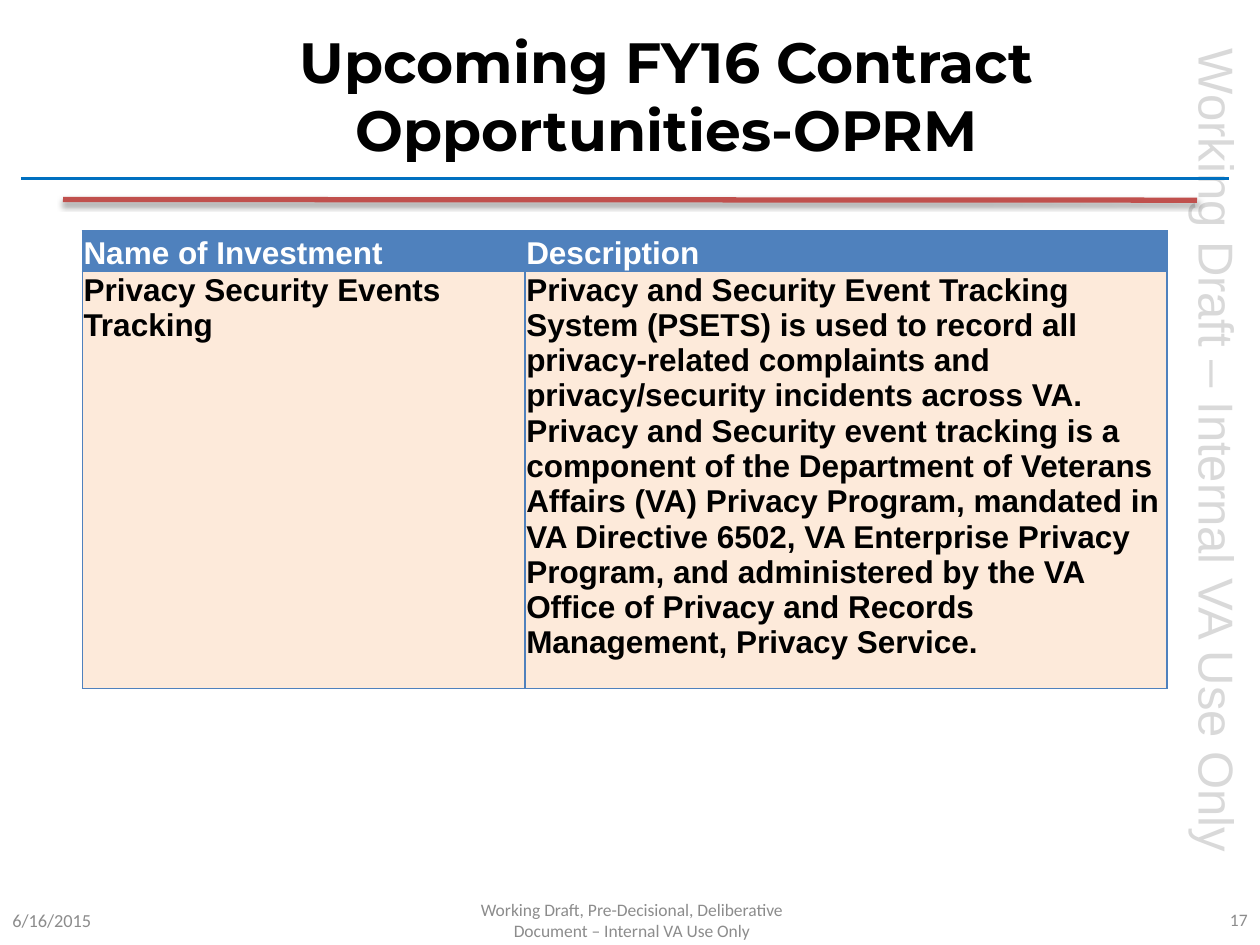
from lxml.etree import SubElement
from pptx import Presentation
from pptx.dml.color import RGBColor
from pptx.enum.shapes import MSO_CONNECTOR
from pptx.enum.text import MSO_ANCHOR as Anchor, PP_ALIGN as Align
from pptx.oxml.ns import qn
from pptx.util import Pt

BLACK = RGBColor(0x00, 0x00, 0x00)
WHITE = RGBColor(0xFF, 0xFF, 0xFF)
LIGHT_GRAY = RGBColor(0xD9, 0xD9, 0xD9)
FOOTER_GRAY = RGBColor(0x8C, 0x8C, 0x8C)
RULE_BLUE = RGBColor(0x00, 0x70, 0xC0)
RULE_RED = RGBColor(0xC0, 0x50, 0x4D)
TABLE_BLUE = RGBColor(0x4F, 0x81, 0xBD)
PEACH = RGBColor(0xFD, 0xEA, 0xDA)

prs = Presentation()
prs.slide_width, prs.slide_height = Pt(720), Pt(540)
slide = prs.slides.add_slide(prs.slide_layouts[6])


def write(frame, text, size, font_name, color, bold=False, align=Align.LEFT):
    paragraph = frame.paragraphs[0]
    paragraph.alignment = align
    run = paragraph.add_run()
    run.text = text
    font = run.font
    font.size, font.name, font.bold = Pt(size), font_name, bold
    font.color.rgb = color


def add_label(box, text, size, font_name, color, bold=False, align=Align.LEFT,
              wrap=True, anchor=Anchor.MIDDLE):
    """Add a text box; box is left, top, width, height in points."""
    label = slide.shapes.add_textbox(*map(Pt, box))
    label.text_frame.word_wrap = wrap
    label.text_frame.vertical_anchor = anchor
    write(label.text_frame, text, size, font_name, color, bold, align)
    return label


# Draft marking down the right edge
marking = add_label((447.84, 248.4, 496.08, 41.04), "Working Draft – Internal VA Use Only",
                    28, "Arial", LIGHT_GRAY, wrap=False, anchor=Anchor.TOP)
marking.rotation = 90

# Footer
for left, width, text, size, align in [
    (0, 168, "6/16/2015", 10.5, Align.LEFT),
    (552, 168, "17", 10, Align.RIGHT),
    (247, 228, "Working Draft, Pre-Decisional, Deliberative Document – Internal VA Use Only",
     10, Align.CENTER),
]:
    add_label((left, 511.2, width, 28.8), text, size, "Calibri", FOOTER_GRAY, align=align)

# Investments table
investments = [
    ("Name of Investment", "Description"),
    ("Privacy Security Events Tracking",
     "Privacy and Security Event Tracking System (PSETS) is used to record all "
     "privacy-related complaints and privacy/security incidents across VA. "
     "Privacy and Security event tracking is a component of the Department of "
     "Veterans Affairs (VA) Privacy Program, mandated in VA Directive 6502, "
     "VA Enterprise Privacy Program, and administered by the VA Office of "
     "Privacy and Records Management, Privacy Service."),
]
row_styles = [(23, TABLE_BLUE, WHITE, Anchor.BOTTOM), (238, PEACH, BLACK, Anchor.TOP)]
table = slide.shapes.add_table(2, 2, Pt(47), Pt(132), Pt(620), Pt(261)).table
for column, width in zip(table.columns, (253, 367)):
    column.width = Pt(width)
for r, (texts, (height, fill, color, anchor)) in enumerate(zip(investments, row_styles)):
    table.rows[r].height = Pt(height)
    for c, text in enumerate(texts):
        cell = table.cell(r, c)
        cell.margin_left = cell.margin_top = cell.margin_right = Pt(0.75)
        cell.margin_bottom = 0
        cell.vertical_anchor = anchor
        write(cell.text_frame, text, 18, "Arial", color, bold=True)
        properties = cell._tc.get_or_add_tcPr()
        for side in ("a:lnL", "a:lnR", "a:lnT", "a:lnB"):
            border = SubElement(properties, qn(side), w=str(Pt(1)))
            border_fill = SubElement(border, qn("a:solidFill"))
            SubElement(border_fill, qn("a:srgbClr"), val=str(TABLE_BLUE))
        cell.fill.solid()
        cell.fill.fore_color.rgb = fill

# Title
add_label((96, 12, 570, 84), "Upcoming FY16 Contract Opportunities-OPRM",
          32.4, "Montserrat", BLACK, bold=True, align=Align.CENTER)

# Rules under the title; the red one casts a shadow
for x1, y1, x2, y2, color, weight, shadowed in [
    (12, 102, 702, 102, RULE_BLUE, 2, False),
    (36, 114, 684, 114.4, RULE_RED, 3, True),
]:
    rule = slide.shapes.add_connector(MSO_CONNECTOR.STRAIGHT, *map(Pt, (x1, y1, x2, y2)))
    rule.line.color.rgb = color
    rule.line.width = Pt(weight)
    effects = SubElement(rule._element.spPr, qn("a:effectLst"))
    if shadowed:
        shadow = SubElement(effects, qn("a:outerShdw"), blurRad=str(Pt(3.1)),
                            dist=str(Pt(1.8)), dir="5400000", rotWithShape="0")
        shadow_color = SubElement(shadow, qn("a:srgbClr"), val=str(BLACK))
        SubElement(shadow_color, qn("a:alpha"), val="35000")

prs.save("out.pptx")
